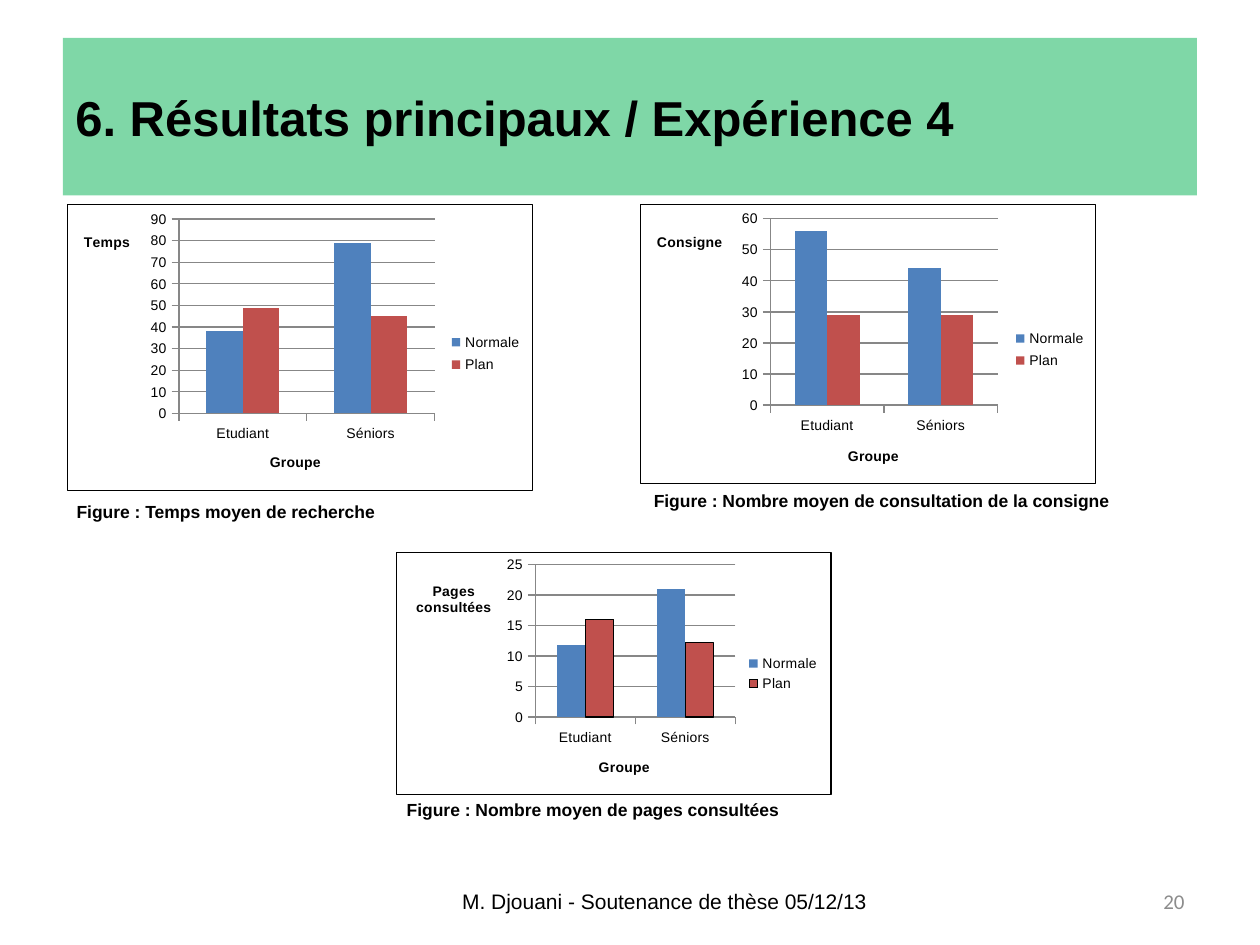
from dataclasses import dataclass

from lxml.etree import SubElement
from pptx import Presentation
from pptx.chart.data import CategoryChartData
from pptx.dml.color import RGBColor
from pptx.enum.chart import XL_CHART_TYPE, XL_LEGEND_POSITION, XL_TICK_MARK
from pptx.enum.shapes import MSO_SHAPE
from pptx.enum.text import MSO_ANCHOR, PP_ALIGN
from pptx.oxml import parse_xml
from pptx.oxml.ns import nsdecls, qn
from pptx.util import Inches, Pt

SLIDE_WIDTH, SLIDE_HEIGHT = Inches(10), Inches(7.5)
COLUMNS, ROWS = 100, 75
BLACK, GREY, GREEN = "000000", "8C8C8C", "00B050"
GRID_GREY, BLUE, RED = "878787", "4F81BD", "C0504D"


@dataclass
class Figure:
    """A bar chart with its caption, placed on the slide grid."""
    area: tuple
    measure: str
    normal: tuple
    plan: tuple
    top: int
    step: int
    plot: tuple
    measure_at: tuple
    group_at: tuple
    legend_at: tuple
    caption: str
    caption_area: tuple
    outlined: bool = False


FIGURES = [
    Figure((50.8, 16.2, 36.2, 22.2), "Consigne", (56, 44), (29, 29), 60, 10,
           (0.285, 0.05, 0.5, 0.67), (0.03, 0.09), (0.45, 0.86), (0.81, 0.43),
           "Figure : Nombre moyen de consultation de la consigne",
           (50.9, 38.4, 39.2, 2.7)),
    Figure((31.4, 43.8, 34.6, 19.3), "Pages consultées", (11.8, 21), (16, 12.2), 25, 5,
           (0.32, 0.05, 0.46, 0.63), (0.04, 0.11), (0.46, 0.84), (0.8, 0.41),
           "Figure : Nombre moyen de pages consultées",
           (31.3, 62.9, 35.4, 2.7), outlined=True),
    Figure((5.3, 16.2, 37, 22.8), "Temps", (38, 79), (49, 45), 90, 10,
           (0.24, 0.05, 0.55, 0.68), (0.03, 0.09), (0.43, 0.86), (0.81, 0.43),
           "Figure : Temps moyen de recherche",
           (5.1, 39.3, 37, 2.7)),
]


def colour(code):
    """Turn a hex string into a colour."""
    return RGBColor.from_string(code)


def place(left, top, width, height):
    """Turn grid columns and rows into slide lengths."""
    across, down = SLIDE_WIDTH / COLUMNS, SLIDE_HEIGHT / ROWS
    return [round(v) for v in (left * across, top * down, width * across, height * down)]


def write(frame, text, size=12, font="Arial", code=BLACK, bold=False,
          align=PP_ALIGN.LEFT, anchor=MSO_ANCHOR.MIDDLE):
    """Write one formatted paragraph into a text frame."""
    frame.word_wrap = True
    frame.vertical_anchor = anchor
    para = frame.paragraphs[0]
    para.alignment = align
    span = para.add_run()
    span.text = text
    span.font.name, span.font.size, span.font.bold = font, Pt(size), bold
    span.font.color.rgb = colour(code)


def add_text(page, area, text, **style):
    """Add a text box on the grid."""
    box = page.shapes.add_textbox(*place(*area))
    write(box.text_frame, text, **style)


def add_banner(page, area, text):
    """Add the half transparent title band."""
    banner = page.shapes.add_shape(MSO_SHAPE.RECTANGLE, *place(*area))
    banner.shadow.inherit = False
    banner.line.fill.background()
    banner.fill.solid()
    banner.fill.fore_color.rgb = colour(GREEN)
    tint = banner.fill._xPr.find(".//" + qn("a:srgbClr"))
    SubElement(tint, qn("a:alpha")).set("val", "50000")
    write(banner.text_frame, text, size=28, bold=True)


def set_layout(parent, shares, inner=False):
    """Give a chart part a fixed position in shares of the chart."""
    old = parent.find(qn("c:layout"))
    if old is not None:
        parent.remove(old)
    target = '<c:layoutTarget val="inner"/>' if inner else ""
    modes = '<c:xMode val="edge"/><c:yMode val="edge"/>'
    sizes = "".join(f'<c:{name} val="{share}"/>' for name, share in zip("xywh", shares))
    layout = parse_xml(f'<c:layout {nsdecls("c")}><c:manualLayout>{target}{modes}{sizes}'
                       '</c:manualLayout></c:layout>')
    before = [parent.find(qn(tag)) for tag in ("c:tx", "c:legendPos")]
    leader = next((item for item in before if item is not None), None)
    if leader is None:
        parent.insert(0, layout)
    else:
        leader.addnext(layout)


def style_axis(axis, text, position):
    """Format an axis and its horizontal title."""
    axis.major_tick_mark = XL_TICK_MARK.OUTSIDE
    axis.minor_tick_mark = XL_TICK_MARK.NONE
    axis.format.line.color.rgb = colour(GRID_GREY)
    axis.format.line.width = Pt(0.75)
    title = axis.axis_title
    write(title.text_frame, text, size=8, bold=True, align=PP_ALIGN.CENTER)
    body = title._element.find(".//" + qn("a:bodyPr"))
    body.set("rot", "0")
    body.set("vert", "horz")
    set_layout(title._element, position)


def add_border(chart):
    """Draw the thin black frame around a chart."""
    frame = parse_xml(f'<c:spPr {nsdecls("c", "a")}><a:noFill/><a:ln w="{Pt(0.75)}"><a:solidFill>'
                      f'<a:srgbClr val="{BLACK}"/></a:solidFill></a:ln></c:spPr>')
    chart._chartSpace.find(qn("c:chart")).addnext(frame)


def add_figure(page, figure):
    """Add one clustered column chart and its caption."""
    data = CategoryChartData(number_format="General")
    data.categories = ["Etudiant", "Séniors"]
    data.add_series("Normale", figure.normal)
    data.add_series("Plan", figure.plan)
    chart = page.shapes.add_chart(
        XL_CHART_TYPE.COLUMN_CLUSTERED, *place(*figure.area), data).chart
    chart.has_title = False
    chart.font.name, chart.font.size = "Arial", Pt(8)
    chart.font.color.rgb = colour(BLACK)
    add_border(chart)

    bars = chart.plots[0]
    bars.gap_width, bars.overlap, bars.vary_by_categories = 150, 0, False
    for series, code in zip(bars.series, (BLUE, RED)):
        series.format.fill.solid()
        series.format.fill.fore_color.rgb = colour(code)
    if figure.outlined:
        outline = bars.series[1].format.line
        outline.color.rgb, outline.width = colour(BLACK), Pt(0.75)

    style_axis(chart.category_axis, "Groupe", figure.group_at)
    values = chart.value_axis
    style_axis(values, figure.measure, figure.measure_at)
    values.minimum_scale, values.maximum_scale = 0, figure.top
    values.major_unit = figure.step
    values.has_major_gridlines = True
    values.major_gridlines.format.line.color.rgb = colour(GRID_GREY)
    values.major_gridlines.format.line.width = Pt(0.75)

    chart.has_legend = True
    chart.legend.position = XL_LEGEND_POSITION.RIGHT
    chart.legend.include_in_layout = False
    set_layout(chart.legend._element, (*figure.legend_at, 0.18, 0.18))
    set_layout(chart._chartSpace.find(".//" + qn("c:plotArea")), figure.plot, inner=True)
    add_text(page, figure.caption_area, figure.caption, size=10, bold=True,
             anchor=MSO_ANCHOR.TOP)


def main():
    """Build the slide and save the deck."""
    deck = Presentation()
    deck.slide_width, deck.slide_height = SLIDE_WIDTH, SLIDE_HEIGHT
    page = deck.slides.add_slide(deck.slide_layouts[6])
    add_banner(page, (5, 3, 90, 12.5), "6. Résultats principaux / Expérience 4")
    for figure in FIGURES:
        add_figure(page, figure)
    add_text(page, (34.2, 69.5, 37.1, 4), "M. Djouani - Soutenance de thèse 05/12/13",
             align=PP_ALIGN.CENTER)
    add_text(page, (71.7, 69.5, 23.3, 4), "20", font="Calibri", code=GREY,
             align=PP_ALIGN.RIGHT)
    deck.save("out.pptx")


if __name__ == "__main__":
    main()
